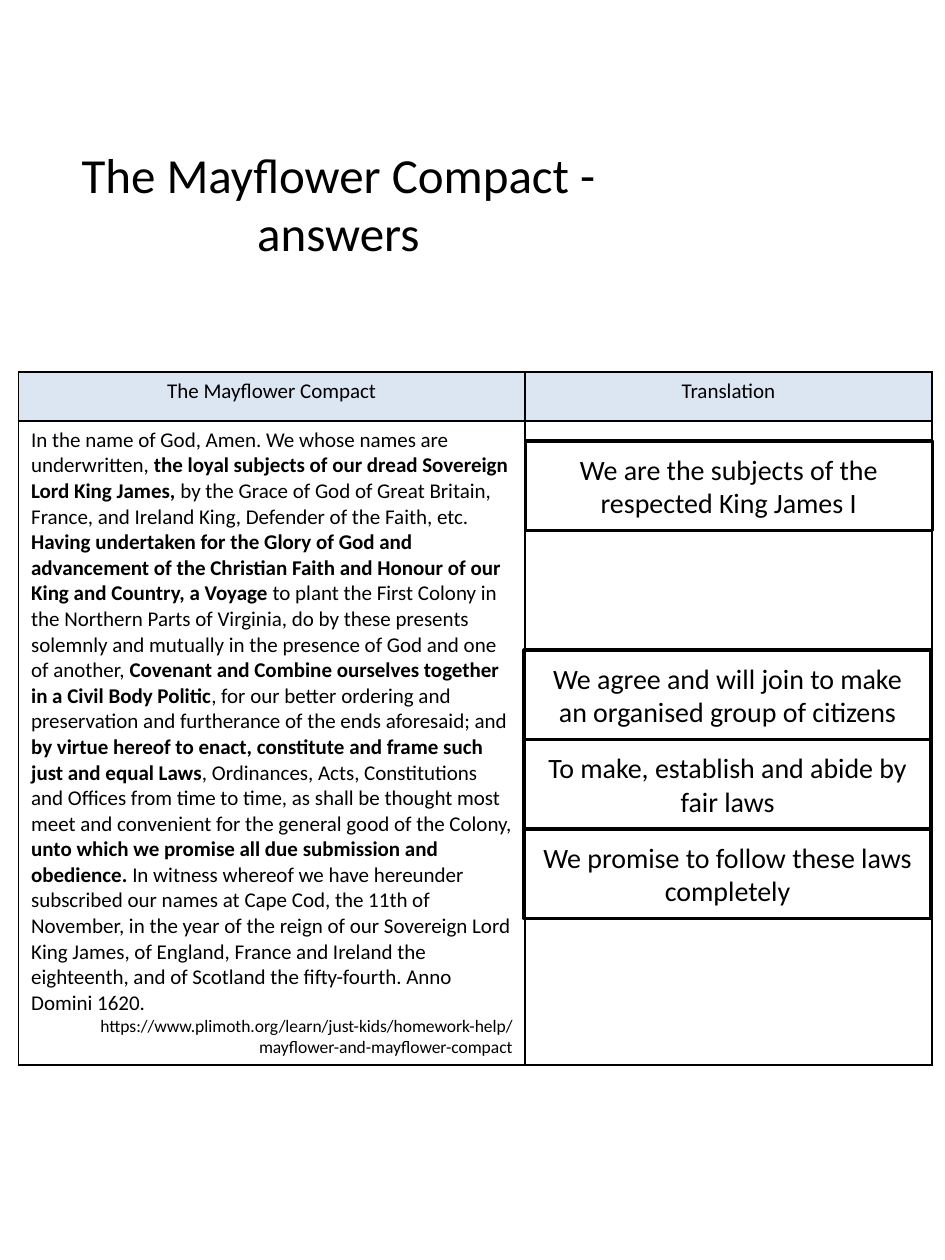
from dataclasses import dataclass

from lxml import etree
from pptx import Presentation
from pptx.dml.color import RGBColor
from pptx.enum import shapes, text
from pptx.oxml import ns
from pptx.util import Pt


@dataclass(frozen=True)
class Theme:
    font: str = "Calibri"
    ink: str = "000000"
    paper: str = "FFFFFF"
    header: str = "DCE6F2"
    title: float = 28
    answer: float = 16
    body: float = 12
    source: float = 10
    border: float = 1
    outline: float = 2


THEME = Theme()
CENTER, LEFT, RIGHT = text.PP_ALIGN.CENTER, text.PP_ALIGN.LEFT, text.PP_ALIGN.RIGHT
PLAIN, BOLD = False, True

OPENING = [
    ("In the name of God, Amen. We whose names are underwritten, ", PLAIN),
    ("the loyal subjects of our dread Sovereign Lord King James, ", BOLD),
    ("by the Grace of God of Great Britain, France, and Ireland King, "
     "Defender of the Faith, etc.", PLAIN),
]
COVENANT = [
    ("Having undertaken for the Glory of God and advancement of the Christian Faith "
     "and Honour of our King and Country, a Voyage", BOLD),
    (" to plant the First Colony in the Northern Parts of Virginia, do by these presents "
     "solemnly and mutually in the presence of God and one of another, ", PLAIN),
    ("Covenant and Combine ourselves together in a Civil Body Politic", BOLD),
    (", for our better ordering and preservation and furtherance of the ends "
     "aforesaid; and ", PLAIN),
    ("by virtue hereof to enact, constitute and frame such just and equal Laws", BOLD),
    (", Ordinances, Acts, Constitutions and Offices from time to time, as shall be thought "
     "most meet and convenient for the general good of the Colony, ", PLAIN),
    ("unto which we promise all due submission and obedience. ", BOLD),
    ("In witness whereof we have hereunder subscribed our names at Cape Cod, the 11th of "
     "November, in the year of the reign of our Sovereign Lord King James, of England, "
     "France and Ireland the eighteenth, and of Scotland the fifty-fourth. "
     "Anno Domini 1620.", PLAIN),
]
SOURCE = "https://www.plimoth.org/learn/just-kids/homework-help/mayflower-and-mayflower-compact"

ANSWER_LEFT, ANSWER_WIDTH, ANSWER_HEIGHT = 299.5, 232.6, 51.1
FIRST_GROUP_TOP = 371.5
GROUPED_ANSWERS = [
    "We agree and will join to make an organised group of citizens",
    "To make, establish and abide by fair laws",
    "We promise to follow these laws completely",
]


def write_runs(paragraph, runs, size, align):
    paragraph.alignment = align
    for wording, bold in runs:
        run = paragraph.add_run()
        run.text = wording
        style = {"name": THEME.font, "size": Pt(size), "bold": bold}
        for key, value in style.items():
            setattr(run.font, key, value)
        run.font.color.rgb = RGBColor.from_string(THEME.ink)


def write(paragraph, wording, size, align):
    write_runs(paragraph, [(wording, PLAIN)], size, align)


def add_title(slide, wording):
    title = slide.shapes.title
    place = {"left": 31.7, "top": 76.3, "width": 323.3, "height": 79.2}
    for key, value in place.items():
        setattr(title, key, Pt(value))
    title.text_frame.vertical_anchor = text.MSO_ANCHOR.MIDDLE
    write(title.text_frame.paragraphs[0], wording, THEME.title, CENTER)


def border_cell(cell):
    properties = cell._tc.get_or_add_tcPr()
    for side in ("lnL", "lnR", "lnT", "lnB"):
        line = etree.SubElement(properties, ns.qn(f"a:{side}"), w=str(Pt(THEME.border)))
        fill = etree.SubElement(line, ns.qn("a:solidFill"))
        etree.SubElement(fill, ns.qn("a:srgbClr"), val=THEME.ink)


def add_compact_table(slide):
    widths, heights = (289.4, 232.6), (28, 368)
    frame = slide.shapes.add_table(
        2, 2, Pt(10.6), Pt(212.6), Pt(sum(widths)), Pt(sum(heights)))
    table = frame.table
    for column, width in zip(table.columns, widths):
        column.width = Pt(width)
    for row, height in zip(table.rows, heights):
        row.height = Pt(height)
    for cell in table.iter_cells():
        border_cell(cell)
        cell.fill.background()
    for column, heading in enumerate(("The Mayflower Compact", "Translation")):
        cell = table.cell(0, column)
        cell.fill.solid()
        cell.fill.fore_color.rgb = RGBColor.from_string(THEME.header)
        write(cell.text_frame.paragraphs[0], heading, THEME.body, CENTER)
    passage = table.cell(1, 0).text_frame
    write_runs(passage.paragraphs[0], OPENING, THEME.body, LEFT)
    write_runs(passage.add_paragraph(), COVENANT, THEME.body, LEFT)
    write(passage.add_paragraph(), SOURCE, THEME.source, RIGHT)


def add_answer(slide, wording, left, top):
    answer = slide.shapes.add_shape(
        shapes.MSO_SHAPE.RECTANGLE, Pt(left), Pt(top), Pt(ANSWER_WIDTH), Pt(ANSWER_HEIGHT))
    answer.shadow.inherit = False
    answer.fill.solid()
    answer.fill.fore_color.rgb = RGBColor.from_string(THEME.paper)
    answer.line.color.rgb = RGBColor.from_string(THEME.ink)
    answer.line.width = Pt(THEME.outline)
    answer.text_frame.word_wrap = True
    answer.text_frame.vertical_anchor = text.MSO_ANCHOR.MIDDLE
    write(answer.text_frame.paragraphs[0], wording, THEME.answer, CENTER)


def main():
    deck = Presentation()
    deck.slide_width, deck.slide_height = Pt(540), Pt(720)
    slide = deck.slides.add_slide(deck.slide_layouts[5])
    add_title(slide, "The Mayflower Compact - answers")
    add_compact_table(slide)
    add_answer(slide, "We are the subjects of the respected King James I", ANSWER_LEFT + 0.7, 252)
    for index, wording in enumerate(GROUPED_ANSWERS):
        add_answer(slide, wording, ANSWER_LEFT, FIRST_GROUP_TOP + index * ANSWER_HEIGHT)
    deck.save("out.pptx")


if __name__ == "__main__":
    main()
